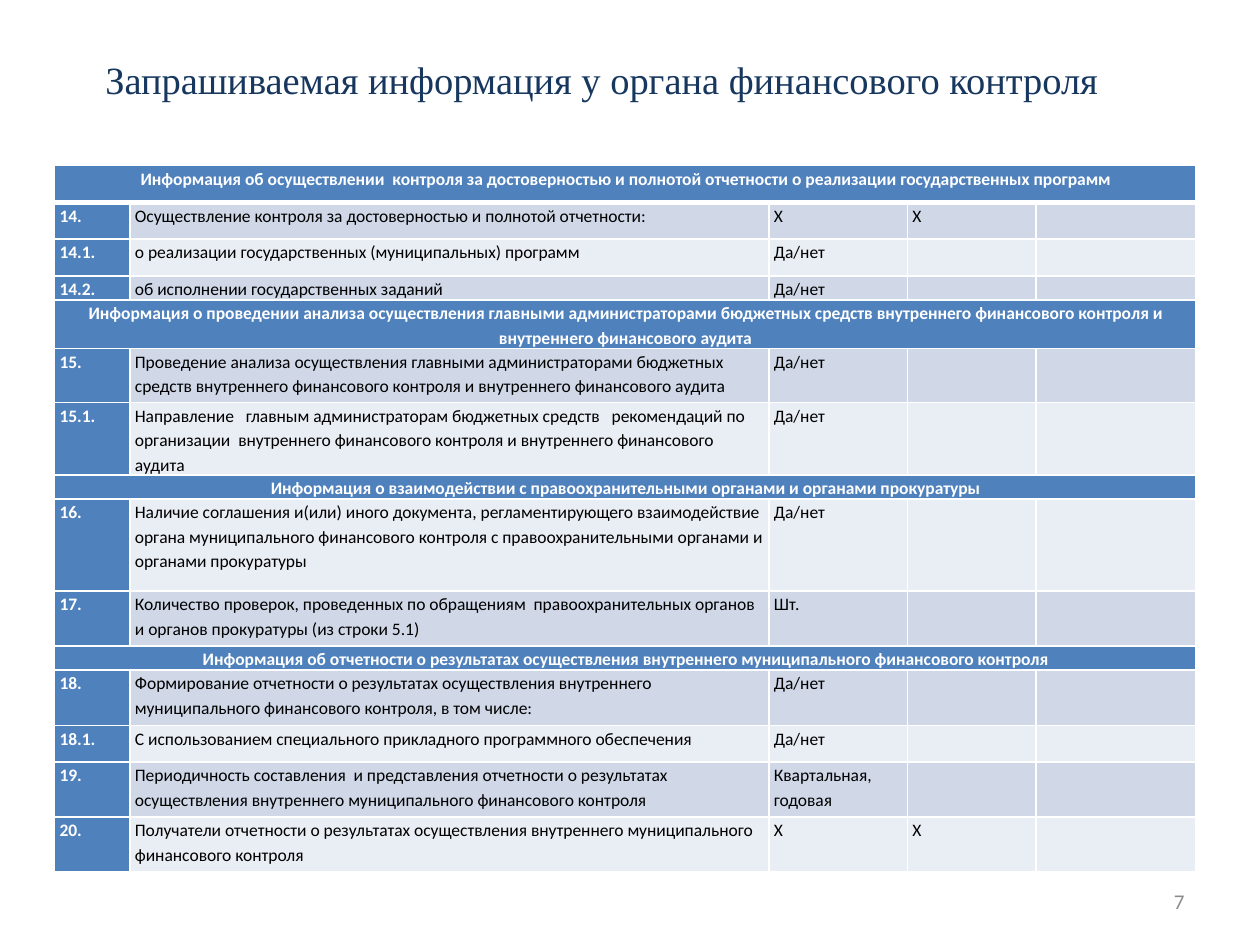
from lxml import etree
from pptx import Presentation
from pptx import util as u
from pptx.dml.color import RGBColor
from pptx.enum import text
from pptx.oxml.ns import qn

BLUE, WHITE, BLACK = "4F81BD", "FFFFFF", "000000"
BANDS = ("E9EDF4", "D0D8E8")
LEFT, MID, RIGHT = text.PP_ALIGN.LEFT, text.PP_ALIGN.CENTER, text.PP_ALIGN.RIGHT
YES = "Да/нет"

COLS = (1.52, 12.88, 2.79, 2.59, 3.23)
# Each row: height in cm, then its texts; a single text is a section heading.
ROWS = (
    (0.74, "Информация об осуществлении  контроля за достоверностью и полнотой отчетности о реализации государственных программ"),
    (0.74, "14.", "Осуществление контроля за достоверностью и полнотой отчетности:", "Х", "Х"),
    (0.74, "14.1.", "о реализации государственных (муниципальных) программ", YES),
    (0.36, "14.2.", "об исполнении государственных заданий", YES),
    (0.74, "Информация о проведении анализа осуществления главными администраторами бюджетных средств внутреннего финансового контроля и внутреннего финансового аудита"),
    (1.09, "15.", "Проведение анализа осуществления главными администраторами бюджетных средств внутреннего финансового контроля и внутреннего финансового аудита", YES),
    (1.02, "15.1.", "Направление   главным администраторам бюджетных средств   рекомендаций по организации  внутреннего финансового контроля и внутреннего финансового аудита", YES),
    (0.36, "Информация о взаимодействии с правоохранительными органами и органами прокуратуры"),
    (1.85, "16.", "Наличие соглашения и(или) иного документа, регламентирующего взаимодействие органа муниципального финансового контроля c правоохранительными органами и органами прокуратуры", YES),
    (1.11, "17.", "Количество проверок, проведенных по обращениям  правоохранительных органов и органов прокуратуры (из строки 5.1)", "Шт."),
    (0.36, "Информация об отчетности о результатах осуществления внутреннего муниципального финансового контроля"),
    (1.11, "18.", "Формирование отчетности о результатах осуществления внутреннего муниципального финансового контроля, в том числе:", YES),
    (0.74, "18.1.", "С использованием специального прикладного программного обеспечения", YES),
    (1.11, "19.", "Периодичность составления  и представления отчетности о результатах осуществления внутреннего муниципального финансового контроля", "Квартальная, годовая"),
    (1.11, "20.", "Получатели отчетности о результатах осуществления внутреннего муниципального финансового контроля", "Х", "Х"),
)


def color(code):
    return RGBColor.from_string(code)


def write(frame, words, size=10, font="Calibri", ink=BLACK, bold=False,
          align=LEFT, gap=None):
    para = frame.paragraphs[0]
    para.alignment = align
    para.line_spacing = gap
    if words:
        run = para.add_run()
        run.text = words
        run.font.size = u.Pt(size)
        run.font.name = font
        run.font.bold = bold
        run.font.color.rgb = color(ink)
    else:
        # An empty cell keeps the text size, so that its row stays low.
        etree.SubElement(para._p, qn("a:endParaRPr"), sz=str(size * 100))


def label(slide, words, box, **style):
    frame = slide.shapes.add_textbox(*map(u.Cm, box)).text_frame
    frame.word_wrap = True
    frame.vertical_anchor = text.MSO_ANCHOR.MIDDLE
    write(frame, words, **style)


def border(cell, **widths):
    """Draw white cell edges, given in points by side."""
    props = cell._tc.get_or_add_tcPr()
    for side in "LRTB":
        line = etree.SubElement(props, qn("a:ln" + side),
                                w=str(u.Pt(widths.get(side, 1))))
        fill = etree.SubElement(line, qn("a:solidFill"))
        etree.SubElement(fill, qn("a:srgbClr"), val=WHITE)


def paint(cell, words, fill, edges, **style):
    cell.margin_left = cell.margin_right = u.Cm(0.1)
    cell.margin_top = cell.margin_bottom = 0
    write(cell.text_frame, words, gap=1.15, **style)
    border(cell, **edges)
    cell.fill.solid()
    cell.fill.fore_color.rgb = color(fill)


def grid(slide, left, top):
    high = sum(row[0] for row in ROWS)
    table = slide.shapes.add_table(
        len(ROWS), len(COLS), u.Cm(left), u.Cm(top),
        u.Cm(sum(COLS)), u.Cm(high)).table
    for col, wide in zip(table.columns, COLS):
        col.width = u.Cm(wide)
    for r, (tall, *words) in enumerate(ROWS):
        table.rows[r].height = u.Cm(tall)
        head = len(words) == 1
        edges = {0: {"B": 3}, 1: {"T": 3}}.get(r, {})
        words += [""] * (len(COLS) - len(words))
        for c, word in enumerate(words):
            key = head or c == 0
            paint(table.cell(r, c), word, BLUE if key else BANDS[r % 2], edges,
                  ink=WHITE if key else BLACK, bold=key,
                  align=MID if head else LEFT)
        if head:
            table.cell(r, 0).merge(table.cell(r, len(COLS) - 1))


def main():
    deck = Presentation()
    deck.slide_width, deck.slide_height = u.Cm(25.4), u.Cm(19.05)
    slide = deck.slides.add_slide(deck.slide_layouts[6])
    label(slide, "7", (18.2, 17.66, 5.93, 1.01), size=12, ink="8C8C8C", align=RIGHT)
    grid(slide, 1.1, 3.34)
    label(slide, "Запрашиваемая информация у органа финансового контроля",
          (0.7, 0, 22.86, 3.18), size=22, font="Times New Roman",
          ink="17375E", align=MID)
    deck.save("out.pptx")


if __name__ == "__main__":
    main()
